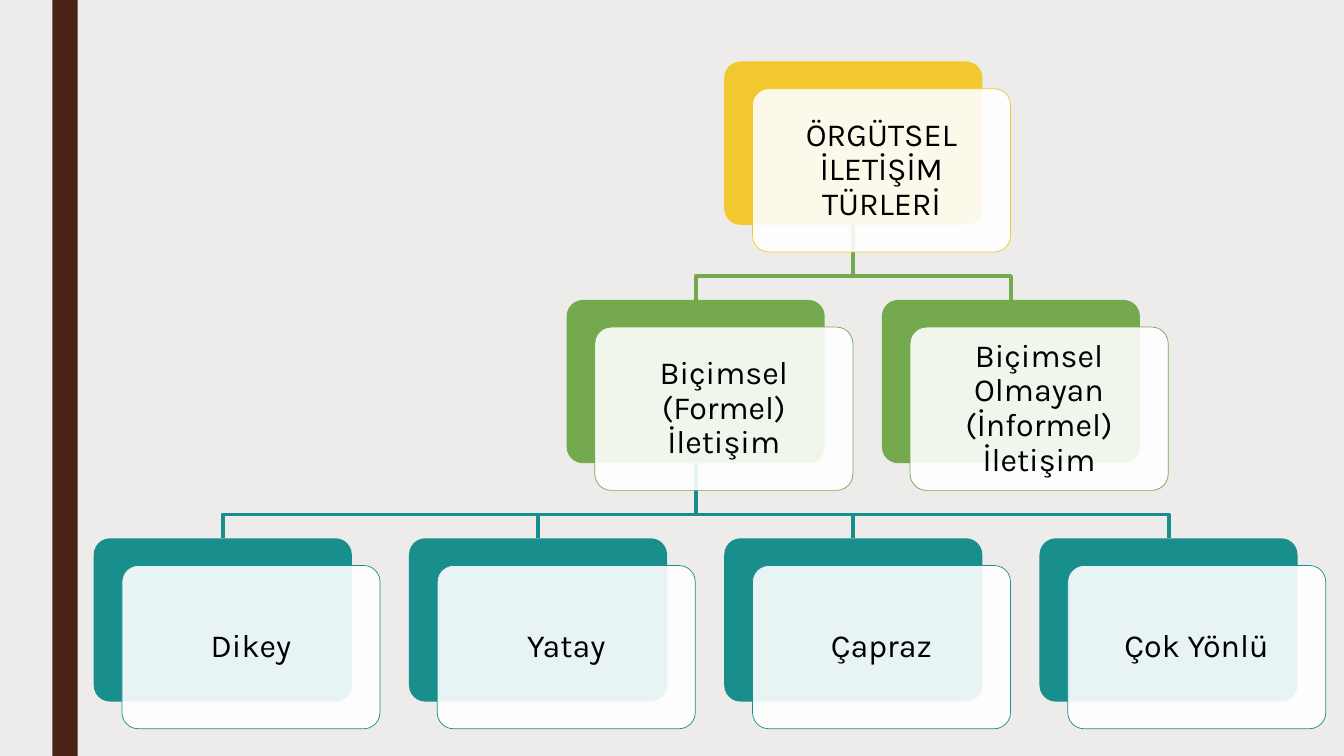
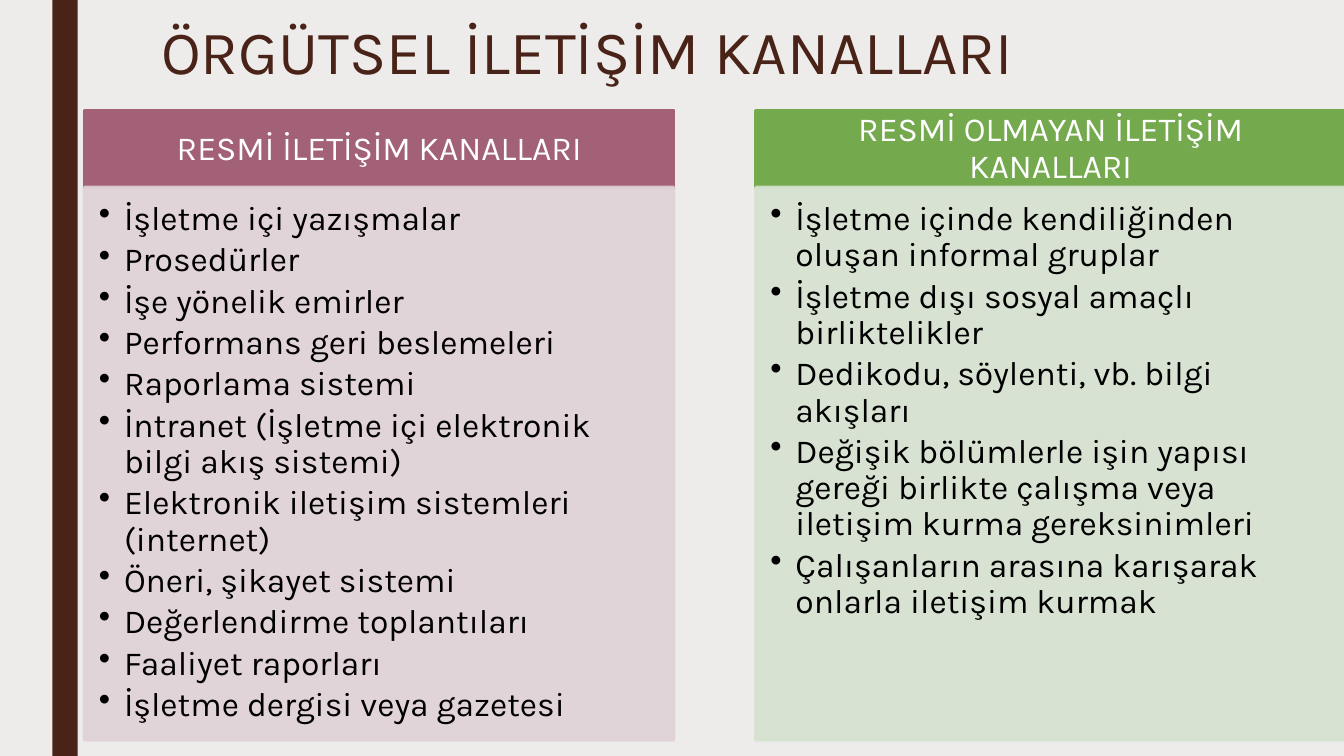
from lxml import etree
from pptx import Presentation
from pptx.dml.color import RGBColor
from pptx.enum.shapes import MSO_SHAPE
from pptx.enum.text import MSO_ANCHOR, PP_ALIGN
from pptx.oxml.ns import qn
from pptx.util import Inches, Pt

# Shared style
FONT = "Karla"
C = {
    "bg": "EDECEB", "brown": "4A2318", "white": "FFFFFF", "black": "000000",
    "yellow": "F3C82E", "green": "74A94E", "teal": "188E8D", "plum": "A26176",
    "plum_light": "E0D2D6", "green_light": "D6E2D0",
}

# Organisation chart: name -> (text, column, level, parent)
NODES = {
    "root": ("ÖRGÜTSEL İLETİŞİM TÜRLERİ", 2, 0, None),
    "formal": ("Biçimsel (Formel) İletişim", 1.5, 1, "root"),
    "informal": ("Biçimsel Olmayan (İnformel) İletişim", 2.5, 1, "root"),
    "vertical": ("Dikey", 0, 2, "formal"),
    "horizontal": ("Yatay", 1, 2, "formal"),
    "diagonal": ("Çapraz", 2, 2, "formal"),
    "multiway": ("Çok Yönlü", 3, 2, "formal"),
}
LEVEL_COLORS = ["yellow", "green", "teal"]
CARD_W, CARD_H = 2.56, 1.62
CHART_X, CHART_Y = 0.93, 0.61
COLUMN_STEP, LEVEL_STEP = 9.38 / 3, 4.73 / 2
FRONT_DX, FRONT_DY = 0.28, 0.27
ELBOW_DROP = 0.51

# Channel lists: (heading, heading colour, body colour, items)
CHANNELS_TITLE = "ÖRGÜTSEL İLETİŞİM KANALLARI"
CHANNELS = [
    ("RESMİ İLETİŞİM KANALLARI", "plum", "plum_light", [
        "İşletme içi yazışmalar",
        "Prosedürler",
        "İşe yönelik emirler",
        "Performans geri beslemeleri",
        "Raporlama sistemi",
        "İntranet (İşletme içi elektronik bilgi akış sistemi)",
        "Elektronik iletişim sistemleri (internet)",
        "Öneri, şikayet sistemi",
        "Değerlendirme toplantıları",
        "Faaliyet raporları",
        "İşletme dergisi veya gazetesi",
    ]),
    ("RESMİ OLMAYAN İLETİŞİM KANALLARI", "green", "green_light", [
        "İşletme içinde kendiliğinden oluşan informal gruplar",
        "İşletme dışı sosyal amaçlı birliktelikler",
        "Dedikodu, söylenti, vb. bilgi akışları",
        "Değişik bölümlerle işin yapısı gereği birlikte çalışma veya "
        "iletişim kurma gereksinimleri",
        "Çalışanların arasına karışarak onlarla iletişim kurmak",
    ]),
]
PANEL_X, PANEL_Y, PANEL_W, PANEL_STEP = 0.84, 1.1, 5.84, 6.66
HEAD_H, BODY_H = 0.76, 5.48


def rgb(name):
    return RGBColor.from_string(C[name])


def set_alpha(fill_parent, percent):
    color = fill_parent.find(qn("a:solidFill"))[0]
    etree.SubElement(color, qn("a:alpha"), val=str(percent * 1000))


def add_box(slide, kind, x, y, w, h, fill, line=None, line_w=0, alpha=None):
    sp = slide.shapes.add_shape(kind, Inches(x), Inches(y), Inches(w), Inches(h))
    sp.shadow.inherit = False
    sp.fill.solid()
    sp.fill.fore_color.rgb = rgb(fill)
    if alpha:
        set_alpha(sp.fill._xPr, alpha)
    if line:
        sp.line.color.rgb = rgb(line)
        sp.line.width = Pt(line_w)
    else:
        sp.line.fill.background()
    return sp


def write(sp, lines, size, color, insets, align=PP_ALIGN.CENTER,
          anchor=MSO_ANCHOR.MIDDLE, bullets=False):
    tf = sp.text_frame
    tf.word_wrap = True
    tf.vertical_anchor = anchor
    tf.margin_left, tf.margin_top, tf.margin_right, tf.margin_bottom = map(Inches, insets)
    for i, text in enumerate(lines):
        p = tf.paragraphs[0] if i == 0 else tf.add_paragraph()
        p.text = text
        p.alignment = align
        p.line_spacing = 0.9
        p.font.name, p.font.size, p.font.color.rgb = FONT, Pt(size), rgb(color)
        if bullets:
            p.space_after = Pt(3.6)
            pPr = p._p.get_or_add_pPr()
            pPr.set("marL", str(Inches(0.25)))
            pPr.set("indent", str(-Inches(0.25)))
            bullet = etree.Element(qn("a:buChar"), char="•")
            pPr.find(qn("a:defRPr")).addprevious(bullet)


def new_slide(prs):
    slide = prs.slides.add_slide(prs.slide_layouts[6])
    add_box(slide, MSO_SHAPE.RECTANGLE, 0.52, 0, 0.25, 7.5, "brown")
    return slide


def card_pos(name):
    _, column, level, _ = NODES[name]
    return CHART_X + column * COLUMN_STEP, CHART_Y + level * LEVEL_STEP


def add_elbow(slide, parent, child, color):
    (px, py), (cx, cy) = card_pos(parent), card_pos(child)
    start_x, end_x = px + CARD_W / 2, cx + CARD_W / 2
    start_y = py + CARD_H
    bend_y = start_y + ELBOW_DROP
    builder = slide.shapes.build_freeform(Inches(start_x), Inches(start_y))
    corners = [(start_x, bend_y), (end_x, bend_y), (end_x, cy)]
    builder.add_line_segments([(Inches(x), Inches(y)) for x, y in corners], close=False)
    sp = builder.convert_to_shape()
    sp.shadow.inherit = False
    sp.fill.background()
    sp.line.color.rgb = rgb(color)
    sp.line.width = Pt(2.75)


def add_card(slide, name):
    text, _, level, _ = NODES[name]
    x, y = card_pos(name)
    color = LEVEL_COLORS[level]
    kind = MSO_SHAPE.ROUNDED_RECTANGLE
    back = add_box(slide, kind, x, y, CARD_W, CARD_H, color)
    front = add_box(slide, kind, x + FRONT_DX, y + FRONT_DY, CARD_W, CARD_H,
                    "white", color, 0.5, alpha=90)
    for sp in (back, front):
        sp.adjustments[0] = 0.1
    write(front, [text], 23, "black", [0.1] * 4)


def build_types(prs):
    slide = new_slide(prs)
    # Connecting lines lie behind the cards
    for name, (_, _, level, parent) in NODES.items():
        if parent:
            add_elbow(slide, parent, name, LEVEL_COLORS[level])
    for name in NODES:
        add_card(slide, name)


def build_channels(prs):
    slide = new_slide(prs)
    title = slide.shapes.add_textbox(Inches(1.5), Inches(0.16), Inches(10.5), Inches(1.09))
    write(title, [CHANNELS_TITLE], 44, "brown", (0.1, 0.05, 0.1, 0.05),
          PP_ALIGN.LEFT, MSO_ANCHOR.TOP)
    # Heading and bulleted body of each panel
    for i, (heading, dark, light, items) in enumerate(CHANNELS):
        x = PANEL_X + i * PANEL_STEP
        head = add_box(slide, MSO_SHAPE.RECTANGLE, x, PANEL_Y, PANEL_W, HEAD_H,
                       dark, dark, 2.75)
        write(head, [heading], 24, "white", (0.19, 0.11, 0.19, 0.11))
        body = add_box(slide, MSO_SHAPE.RECTANGLE, x, PANEL_Y + HEAD_H, PANEL_W, BODY_H,
                       light, light, 2.75, alpha=90)
        set_alpha(body.line._ln, 90)
        write(body, items, 24, "black", (0.14, 0.14, 0.19, 0.21),
              PP_ALIGN.LEFT, MSO_ANCHOR.TOP, bullets=True)


def main():
    prs = Presentation()
    prs.slide_width, prs.slide_height = Inches(13.33), Inches(7.5)
    background = prs.slide_master.background.fill
    background.solid()
    background.fore_color.rgb = rgb("bg")
    build_types(prs)
    build_channels(prs)
    prs.save("out.pptx")


if __name__ == "__main__":
    main()
